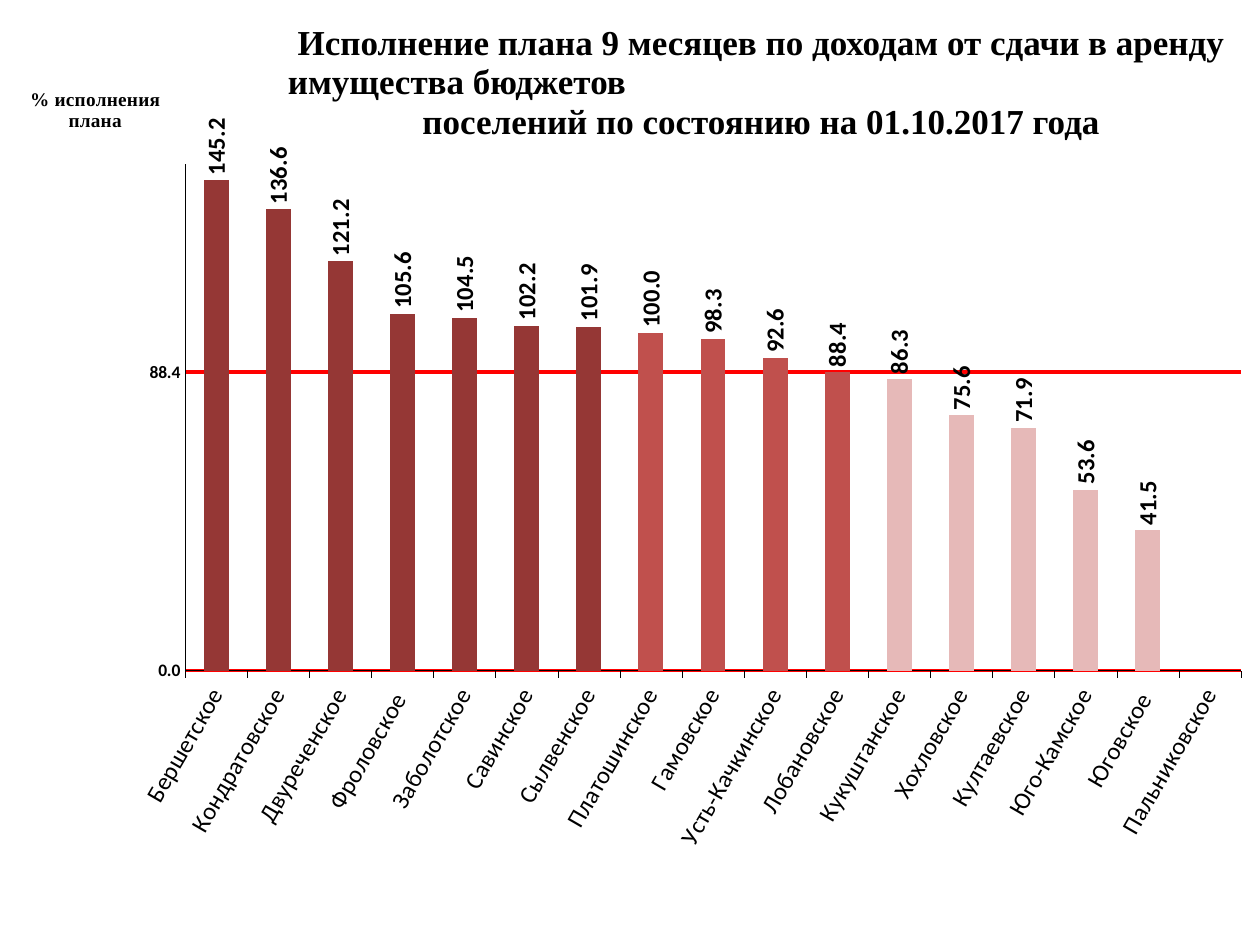
"""Build the slide on rental income plan execution by settlement."""
import lxml.etree
import pptx
import pptx.chart.data
import pptx.dml.color
import pptx.enum.chart
import pptx.enum.text
import pptx.oxml.ns
import pptx.util

Pt = pptx.util.Pt
RGBColor = pptx.dml.color.RGBColor
qn = pptx.oxml.ns.qn
ALIGN = pptx.enum.text.PP_ALIGN
XL = pptx.enum.chart

BLACK = RGBColor(0x00, 0x00, 0x00)
RED = RGBColor(0xFF, 0x00, 0x00)
DARK = RGBColor(0x95, 0x37, 0x35)
MEDIUM = RGBColor(0xC0, 0x50, 0x4D)
LIGHT = RGBColor(0xE6, 0xB9, 0xB8)
SERIF, SANS = "Times New Roman", "Calibri"

TITLE = [
    ("Исполнение плана 9 месяцев по доходам от сдачи в аренду", ALIGN.CENTER),
    ("имущества бюджетов", ALIGN.LEFT),
    ("поселений по состоянию на 01.10.2017 года", ALIGN.CENTER),
]
AXIS_TITLE = ["% исполнения", "плана"]
AVERAGE = 88.4
RESULTS = [
    ("Бершетское", 145.2), ("Кондратовское", 136.6), ("Двуреченское", 121.2),
    ("Фроловское ", 105.6), ("Заболотское", 104.5), ("Савинское", 102.2),
    ("Сылвенское", 101.9), ("Платошинское", 100), ("Гамовское", 98.3),
    ("Усть-Качкинское", 92.6), ("Лобановское", 88.4), ("Кукуштанское", 86.3),
    ("Хохловское", 75.6), ("Култаевское", 71.9), ("Юго-Камское", 53.6),
    ("Юговское ", 41.5), ("Пальниковское", None),
]


def set_font(font, name, size, bold):
    font.name, font.size, font.bold = name, Pt(size), bold
    font.color.rgb = BLACK


def write_lines(tf, lines, size):
    for i, (text, align) in enumerate(lines):
        p = tf.paragraphs[0] if i == 0 else tf.add_paragraph()
        p.text, p.alignment = text, align
        set_font(p.font, SERIF, size, True)


def make_layout(**values):
    layout = lxml.etree.Element(qn("c:layout"))
    manual = lxml.etree.SubElement(layout, qn("c:manualLayout"))
    for tag, value in values.items():
        lxml.etree.SubElement(manual, qn("c:" + tag)).set("val", str(value))
    return layout


def drop_layout(parent):
    for layout in parent.findall(qn("c:layout")):
        parent.remove(layout)


def rotate(body, degrees):
    body.set("rot", str(degrees * 60000))
    body.set("vert", "horz")


def bar_color(value):
    if value is None or value > 100:
        return DARK
    return MEDIUM if value >= AVERAGE else LIGHT


def add_title(slide):
    sp = slide.shapes.title
    sp.left, sp.top, sp.width, sp.height = Pt(164.5), Pt(13), Pt(541), Pt(68)
    tf = sp.text_frame
    tf.margin_left = tf.margin_right = tf.margin_top = tf.margin_bottom = 0
    tf.word_wrap = True
    tf.auto_size = pptx.enum.text.MSO_AUTO_SIZE.NONE
    tf.vertical_anchor = pptx.enum.text.MSO_ANCHOR.TOP
    write_lines(tf, TITLE, 20)
    for p in tf.paragraphs:
        p.line_spacing = Pt(22.6)
        p.space_before = Pt(0)


def format_axes(chart):
    cat, val = chart.category_axis, chart.value_axis
    for axis, size, bold in ((cat, 14, False), (val, 10, True)):
        set_font(axis.tick_labels.font, SANS, size, bold)
        axis.format.line.color.rgb = BLACK
        axis.format.line.width = Pt(0.25)
        axis.minor_tick_mark = XL.XL_TICK_MARK.NONE
    cat.major_tick_mark = XL.XL_TICK_MARK.OUTSIDE
    cat.tick_label_position = XL.XL_TICK_LABEL_POSITION.LOW
    rotate(cat._element.find(qn("c:txPr")).find(qn("a:bodyPr")), -60)

    val.major_tick_mark = XL.XL_TICK_MARK.NONE
    val.minimum_scale, val.maximum_scale, val.major_unit = 0, 150, AVERAGE
    val.tick_labels.number_format = "0.0"
    val.tick_labels.number_format_is_linked = False
    val.major_gridlines.format.line.color.rgb = RED
    val.major_gridlines.format.line.width = Pt(2)

    tf = val.axis_title.text_frame
    write_lines(tf, [(text, ALIGN.CENTER) for text in AXIS_TITLE], 11)
    rotate(tf._txBody.find(qn("a:bodyPr")), 0)
    title = val._element.find(qn("c:title"))
    drop_layout(title)
    title.find(qn("c:tx")).addnext(
        make_layout(xMode="edge", yMode="edge", x=0.01, y=0.08))


def format_bars(plot):
    plot.gap_width = 150
    plot.vary_by_categories = False
    series = plot.series[0]
    series.format.fill.solid()
    series.format.fill.fore_color.rgb = DARK
    for i, (name, value) in enumerate(RESULTS):
        fill = series.points[i].format.fill
        fill.solid()
        fill.fore_color.rgb = bar_color(value)
    labels = series.data_labels
    labels.show_value = True
    labels.position = XL.XL_LABEL_POSITION.OUTSIDE_END
    labels.number_format = "#,##0.0"
    labels.number_format_is_linked = False
    set_font(labels.font, SANS, 14, True)
    rotate(labels._element.find(qn("c:txPr")).find(qn("a:bodyPr")), -90)


def add_chart(slide):
    data = pptx.chart.data.CategoryChartData(number_format="0.0")
    data.categories = [name for name, value in RESULTS]
    data.add_series("Series 1", [value for name, value in RESULTS])
    chart = slide.shapes.add_chart(
        XL.XL_CHART_TYPE.COLUMN_CLUSTERED,
        Pt(8), Pt(5), Pt(704), Pt(529), data).chart
    chart.has_legend = False
    chart.has_title = False
    set_font(chart.font, SANS, 10, False)
    format_axes(chart)
    format_bars(chart.plots[0])
    area = chart._chartSpace.find(qn("c:chart")).find(qn("c:plotArea"))
    drop_layout(area)
    area.insert(0, make_layout(
        layoutTarget="inner", xMode="edge", yMode="edge",
        x=0.139, y=0.168, w=0.857, h=0.547))


def main():
    prs = pptx.Presentation()
    prs.slide_width, prs.slide_height = Pt(720), Pt(540)
    slide = prs.slides.add_slide(prs.slide_layouts[5])
    add_title(slide)
    add_chart(slide)
    prs.save("out.pptx")


if __name__ == "__main__":
    main()
